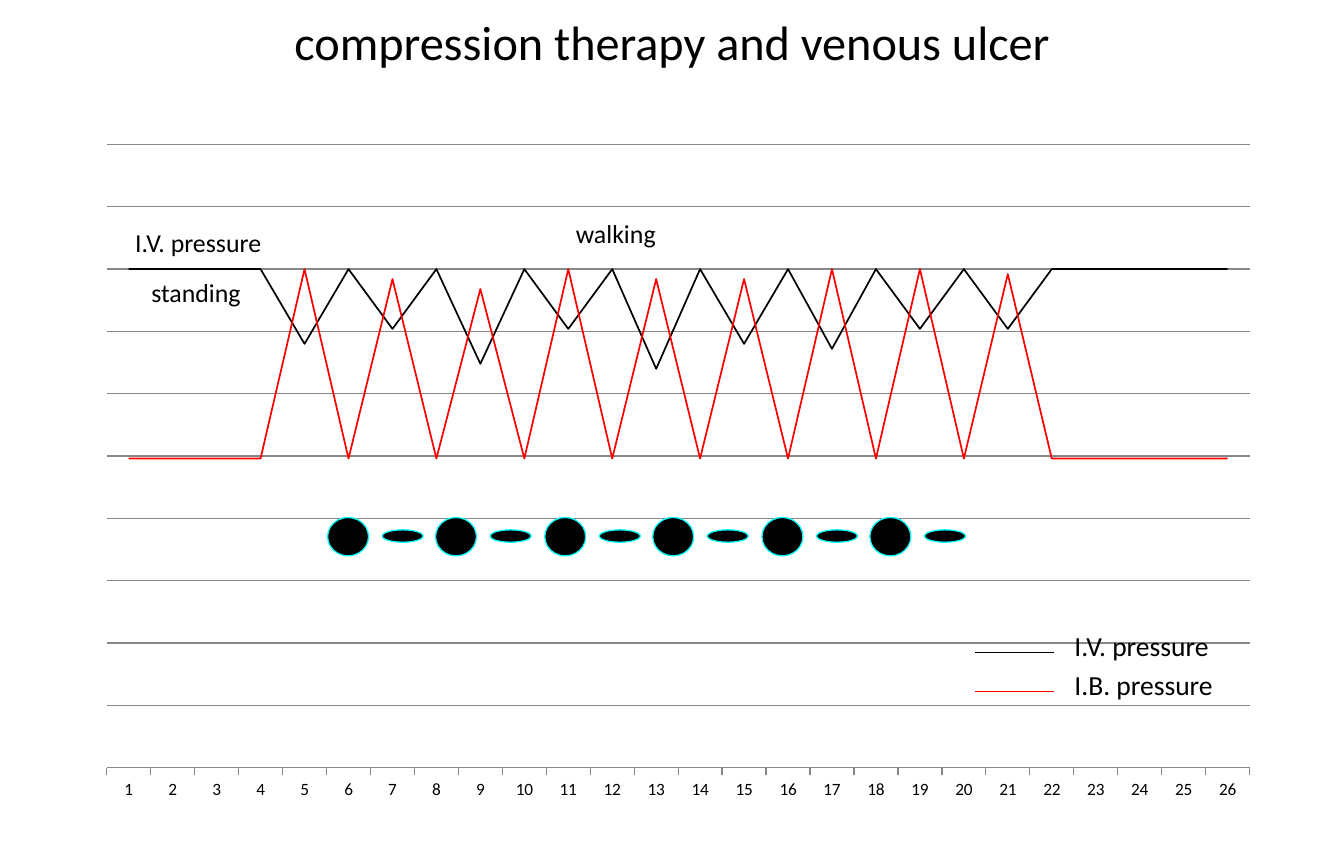
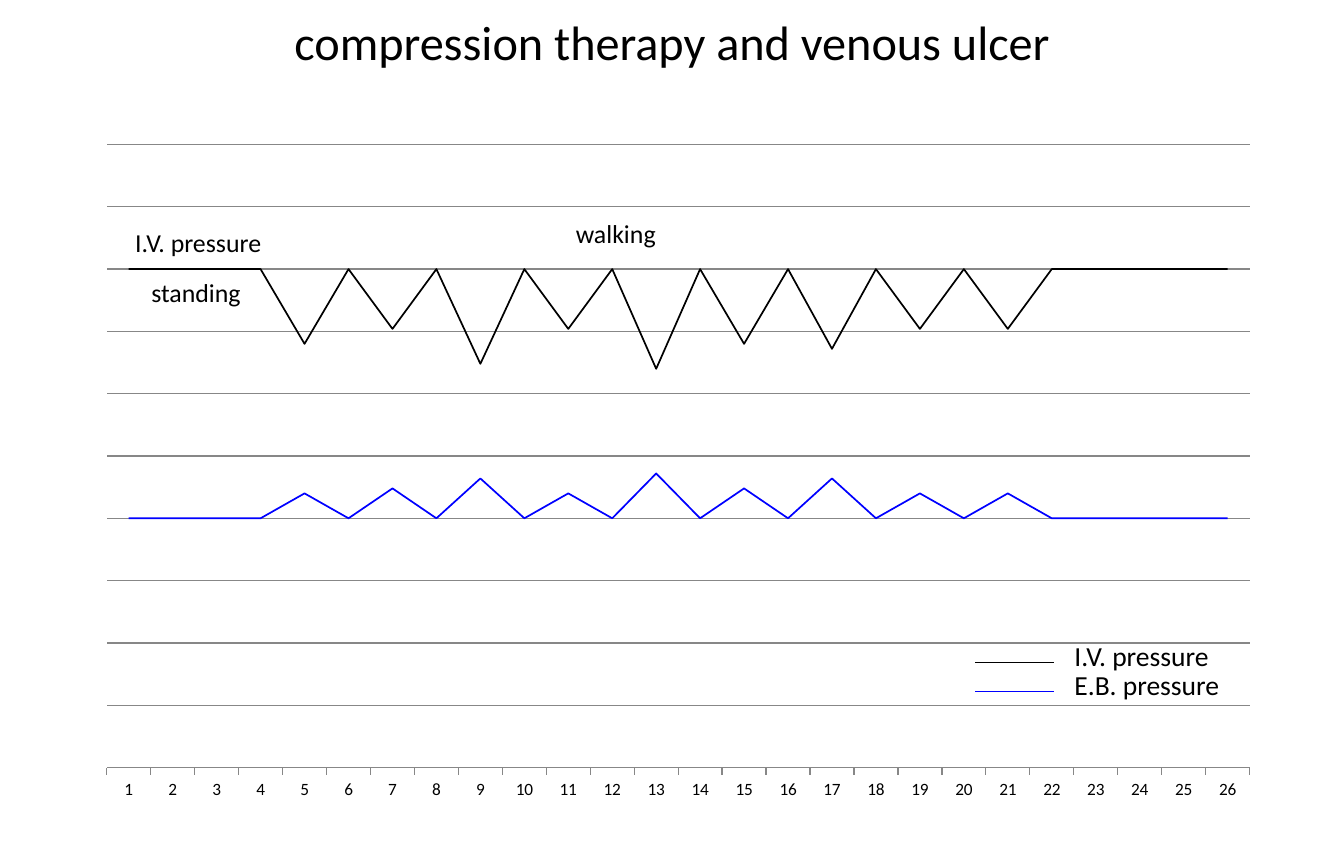
from lxml.etree import SubElement
from pptx import Presentation
from pptx.chart.data import CategoryChartData
from pptx.dml.color import RGBColor
from pptx.enum.chart import XL_CHART_TYPE, XL_MARKER_STYLE, XL_TICK_MARK
from pptx.enum.shapes import MSO_CONNECTOR, MSO_SHAPE
from pptx.enum.text import MSO_AUTO_SIZE, PP_ALIGN
from pptx.oxml import parse_xml
from pptx.oxml.ns import nsdecls, qn
from pptx.util import Pt

PX = 9144  # EMU per px, 100 px to the inch
WIDTH, HEIGHT = 1083, 689
FONT = "Calibri"
BLACK = RGBColor(0x00, 0x00, 0x00)
RED = RGBColor(0xFF, 0x00, 0x00)
BLUE = RGBColor(0x00, 0x00, 0xFF)
CYAN = RGBColor(0x00, 0xFF, 0xFF)
GREY = RGBColor(0x87, 0x87, 0x87)

TITLE = "compression therapy and venous ulcer"
PLOT = {"x": 0.064, "y": 0.041, "w": 0.921, "h": 0.878}

# Pressure reached at each of the nine steps
IV_STEPS = [85, 88, 81, 88, 80, 85, 84, 88, 88]
IB_STEPS = [100, 98, 96, 100, 98, 98, 100, 100, 99]
EB_STEPS = [55, 56, 58, 55, 59, 56, 58, 55, 55]


def px(*lengths):
    return [n * PX for n in lengths]


def walk(rest, steps):
    """Pressure while standing, then walking, then standing again."""
    values = [rest] * 3
    for step in steps:
        values += [rest, step]
    return values + [rest] * 5


def add_text(shapes, text, x, y, w, h, size=15, align=PP_ALIGN.LEFT,
             wrap=False, spacing=None, grow=False, inset=(9, 4)):
    sp = shapes.add_textbox(*px(x, y, w, h))
    tf = sp.text_frame
    tf.word_wrap = wrap
    tf.auto_size = MSO_AUTO_SIZE.SHAPE_TO_FIT_TEXT if grow else MSO_AUTO_SIZE.NONE
    tf.margin_left = tf.margin_right = inset[0] * PX
    tf.margin_top = tf.margin_bottom = inset[1] * PX
    p = tf.paragraphs[0]
    p.alignment = align
    p.line_spacing = spacing
    r = p.add_run()
    r.text = text
    r.font.name, r.font.size = FONT, Pt(size)
    r.font.color.rgb = BLACK
    return sp


def set_line(line, color, width=0.75):
    line.color.rgb = color
    line.width = Pt(width)


def add_line(shapes, x1, y1, x2, y2, color):
    cxn = shapes.add_connector(MSO_CONNECTOR.STRAIGHT, *px(x1, y1, x2, y2))
    set_line(cxn.line, color)
    SubElement(cxn._element.spPr, qn("a:effectLst"))


def add_ellipse(shapes, x, y, w, h):
    sp = shapes.add_shape(MSO_SHAPE.OVAL, *px(x, y, w, h))
    sp.shadow.inherit = False
    sp.fill.solid()
    sp.fill.fore_color.rgb = BLACK
    set_line(sp.line, CYAN)


def clear_background(chart):
    """Fix the inner plot area and let the labels behind show through."""
    space = chart._chartSpace
    plot_area = space.chart.plotArea
    for old in plot_area.findall(qn("c:layout")):
        plot_area.remove(old)
    layout = parse_xml(f"<c:layout {nsdecls('c')}><c:manualLayout/></c:layout>")
    modes = {"layoutTarget": "inner", "xMode": "edge", "yMode": "edge"}
    for tag, val in {**modes, **PLOT}.items():
        SubElement(layout[0], qn(f"c:{tag}")).set("val", str(val))
    plot_area.insert(0, layout)
    no_fill = (f"<c:spPr {nsdecls('c', 'a')}><a:noFill/>"
               "<a:ln><a:noFill/></a:ln></c:spPr>")
    plot_area.append(parse_xml(no_fill))
    space.chart.addnext(parse_xml(no_fill))


def add_pressure_chart(shapes, series):
    data = CategoryChartData()
    data.categories = [str(n) for n in range(1, 27)]
    for n, (values, _) in enumerate(series, 1):
        data.add_series(f"Series {n}", values)
    frame = shapes.add_chart(XL_CHART_TYPE.LINE, *px(22, 93, 1000, 572), data)
    chart = frame.chart
    chart.has_legend = chart.has_title = False
    chart.font.name, chart.font.size = FONT, Pt(10)
    chart.font.color.rgb = BLACK
    chart.plots[0].vary_by_categories = False
    for ser, (_, color) in zip(chart.plots[0].series, series):
        ser.smooth = False
        ser.marker.style = XL_MARKER_STYLE.NONE
        set_line(ser.format.line, color, 1)

    # Axes
    cat, val = chart.category_axis, chart.value_axis
    cat.major_tick_mark = XL_TICK_MARK.OUTSIDE
    cat.minor_tick_mark = XL_TICK_MARK.NONE
    set_line(cat.format.line, GREY)
    val.minimum_scale, val.maximum_scale, val.major_unit = 0, 125, 12.5
    val.has_major_gridlines = True
    set_line(val.major_gridlines.format.line, GREY)
    val.visible = False
    clear_background(chart)


def add_legend(shapes, top, gap, entries):
    group = shapes.add_group_shape().shapes
    for n, (text, color) in enumerate(entries):
        y = top + n * gap
        add_line(group, 786, y + 24, 849, y + 24, color)
        add_text(group, text, 856, y, 139, 37, size=16, grow=True, inset=(10, 5))


def add_muscle_pump(shapes):
    """Alternate open and squeezed veins at an equal pitch."""
    group = shapes.add_group_shape().shapes
    for n in range(12):
        x = 264 + round(n * 481 / 11)
        y, h = (427, 10) if n % 2 else (417, 31)
        add_ellipse(group, x, y, 33, h)


def add_pressure_slide(prs, name, color, rest, steps, legend_top, legend_gap):
    shapes = prs.slides.add_slide(prs.slide_layouts[6]).shapes
    add_text(shapes, "standing", 113, 219, 106, 51)
    add_text(shapes, "walking", 455, 171, 106, 51)
    add_text(shapes, "I.V. pressure", 100, 179, 106, 34)
    add_pressure_chart(shapes, [(walk(100, IV_STEPS), BLACK),
                                (walk(rest, steps), color)])
    add_legend(shapes, legend_top, legend_gap,
               [("I.V. pressure", BLACK), (name, color)])
    add_text(shapes, TITLE, 0, 11, WIDTH, 74, size=28, align=PP_ALIGN.CENTER,
             wrap=True, spacing=0.9)
    return shapes


def main():
    prs = Presentation()
    prs.slide_width, prs.slide_height = px(WIDTH, HEIGHT)
    shapes = add_pressure_slide(prs, "I.B. pressure", RED, 62, IB_STEPS, 502, 31)
    add_muscle_pump(shapes)
    add_pressure_slide(prs, "E.B. pressure", BLUE, 50, EB_STEPS, 510, 23)
    prs.save("out.pptx")


if __name__ == "__main__":
    main()
